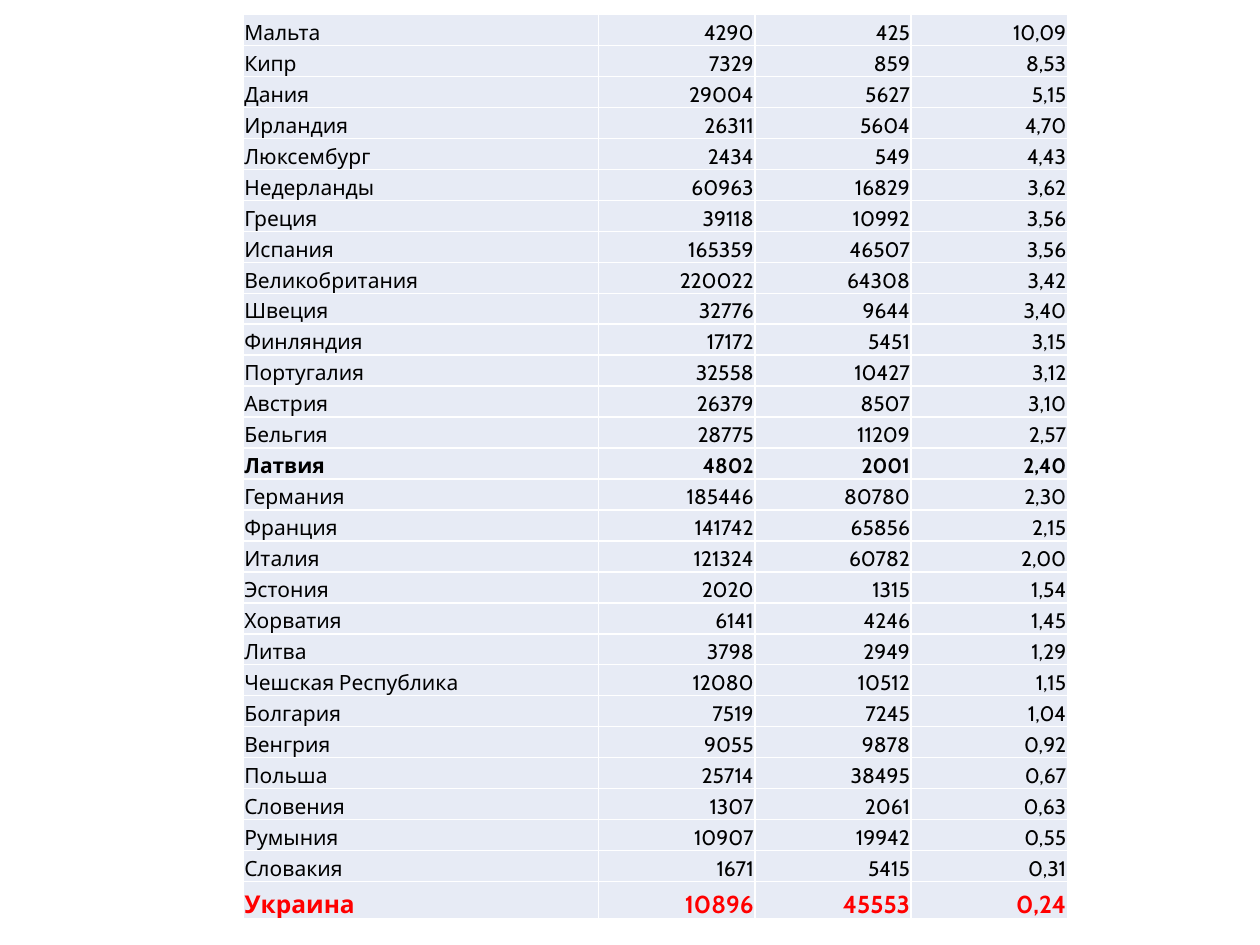
from lxml.etree import SubElement
from pptx import Presentation
from pptx.dml.color import RGBColor
from pptx.enum.text import MSO_ANCHOR, PP_ALIGN
from pptx.oxml.ns import qn
from pptx.util import Pt

COLORS = {"cell": "E7EBF5", "border": "FFFFFF", "text": "000000", "accent": "FF0000"}
FONT = "Cabin"
COLUMN_WIDTHS = [203, 89.3, 89.3, 89.3]
ROW_HEIGHT, LAST_ROW_HEIGHT = 17.69, 21.6
CELL_FORMAT = {
    "margin_left": Pt(0.6),
    "margin_top": Pt(0.6),
    "margin_right": Pt(0.6),
    "margin_bottom": 0,
    "vertical_anchor": MSO_ANCHOR.BOTTOM,
}
PLAIN = {"size": Pt(12), "bold": False, "name": FONT}
ROW_FONTS = {
    "Латвия": PLAIN | {"bold": True},
    "Украина": PLAIN | {"bold": True, "size": Pt(14)},
}
ROW_COLORS = {"Украина": "accent"}

COUNTRIES = [
    ("Мальта", "4290", "425", "10,09"),
    ("Кипр", "7329", "859", "8,53"),
    ("Дания", "29004", "5627", "5,15"),
    ("Ирландия", "26311", "5604", "4,70"),
    ("Люксембург", "2434", "549", "4,43"),
    ("Недерланды", "60963", "16829", "3,62"),
    ("Греция", "39118", "10992", "3,56"),
    ("Испания", "165359", "46507", "3,56"),
    ("Великобритания", "220022", "64308", "3,42"),
    ("Швеция", "32776", "9644", "3,40"),
    ("Финляндия", "17172", "5451", "3,15"),
    ("Португалия", "32558", "10427", "3,12"),
    ("Австрия", "26379", "8507", "3,10"),
    ("Бельгия", "28775", "11209", "2,57"),
    ("Латвия", "4802", "2001", "2,40"),
    ("Германия", "185446", "80780", "2,30"),
    ("Франция", "141742", "65856", "2,15"),
    ("Италия", "121324", "60782", "2,00"),
    ("Эстония", "2020", "1315", "1,54"),
    ("Хорватия", "6141", "4246", "1,45"),
    ("Литва", "3798", "2949", "1,29"),
    ("Чешская Республика", "12080", "10512", "1,15"),
    ("Болгария", "7519", "7245", "1,04"),
    ("Венгрия", "9055", "9878", "0,92"),
    ("Польша", "25714", "38495", "0,67"),
    ("Словения", "1307", "2061", "0,63"),
    ("Румыния", "10907", "19942", "0,55"),
    ("Словакия", "1671", "5415", "0,31"),
    ("Украина", "10896", "45553", "0,24"),
]


def set_attributes(target, values):
    for name, value in values.items():
        setattr(target, name, value)


def add_borders(cell):
    properties = cell._tc.get_or_add_tcPr()
    for position, side in enumerate(("lnL", "lnR", "lnT", "lnB")):
        line = properties.makeelement(qn(f"a:{side}"), {"w": str(Pt(1))})
        fill = SubElement(line, qn("a:solidFill"))
        SubElement(fill, qn("a:srgbClr"), val=COLORS["border"])
        properties.insert(position, line)  # borders precede the fill


def fill_cell(cell, text, alignment, font_format, color):
    set_attributes(cell, CELL_FORMAT)
    cell.fill.solid()
    cell.fill.fore_color.rgb = RGBColor.from_string(COLORS["cell"])
    add_borders(cell)
    paragraph = cell.text_frame.paragraphs[0]
    paragraph.alignment = alignment
    run = paragraph.add_run()
    run.text = text
    set_attributes(run.font, font_format)
    run.font.color.rgb = RGBColor.from_string(COLORS[color])


def add_country_table(slide, left, top):
    heights = [ROW_HEIGHT] * (len(COUNTRIES) - 1) + [LAST_ROW_HEIGHT]
    table = slide.shapes.add_table(
        len(heights), len(COLUMN_WIDTHS), Pt(left), Pt(top),
        Pt(sum(COLUMN_WIDTHS)), Pt(sum(heights)),
    ).table
    set_attributes(table, {"first_row": False, "horz_banding": False})
    for column, width in zip(table.columns, COLUMN_WIDTHS):
        column.width = Pt(width)
    for row, height, values in zip(table.rows, heights, COUNTRIES):
        row.height = Pt(height)
        country = values[0]
        font_format = ROW_FONTS.get(country, PLAIN)
        color = ROW_COLORS.get(country, "text")
        for index, (cell, text) in enumerate(zip(row.cells, values)):
            alignment = PP_ALIGN.RIGHT if index else PP_ALIGN.LEFT
            fill_cell(cell, text, alignment, font_format, color)


def main():
    presentation = Presentation()
    presentation.slide_width, presentation.slide_height = Pt(720), Pt(540)
    slide = presentation.slides.add_slide(presentation.slide_layouts[6])
    add_country_table(slide, left=139, top=8.4)
    presentation.save("out.pptx")


if __name__ == "__main__":
    main()
